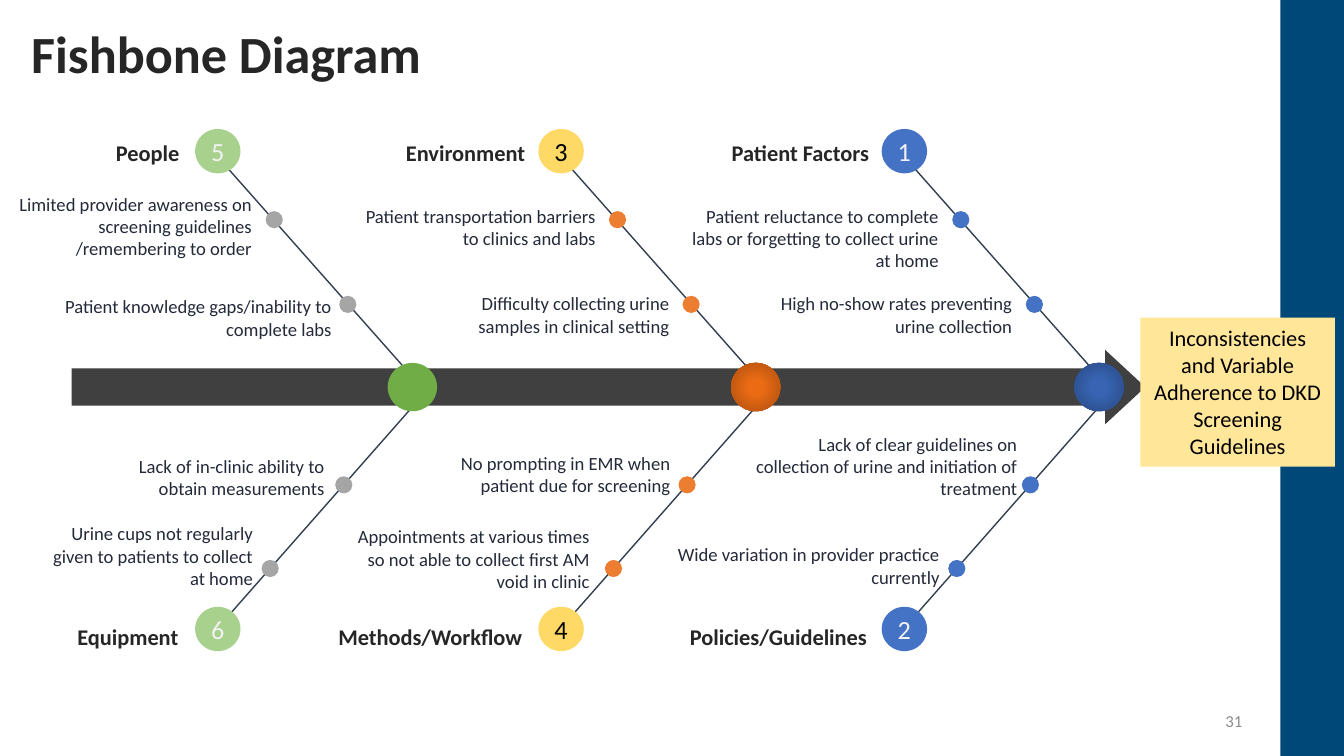
"""Build a fishbone diagram slide on screening guideline adherence."""
from dataclasses import dataclass
from typing import Optional

from lxml.etree import SubElement
from pptx import Presentation
from pptx.dml.color import RGBColor
from pptx.enum.shapes import MSO_CONNECTOR, MSO_SHAPE
from pptx.enum.text import MSO_ANCHOR, MSO_AUTO_SIZE, PP_ALIGN
from pptx.oxml import parse_xml
from pptx.oxml.ns import nsdecls, qn
from pptx.util import Inches, Pt

FONT = "Calibri"
NAVY = RGBColor(0x00, 0x48, 0x77)
SLATE = RGBColor(0x33, 0x3F, 0x50)
CHARCOAL = RGBColor(0x40, 0x40, 0x40)
INK = RGBColor(0x26, 0x26, 0x26)
CAUSE_INK = RGBColor(0x24, 0x2A, 0x39)
BLACK = RGBColor(0x00, 0x00, 0x00)
PALE = RGBColor(0xF2, 0xF2, 0xF2)
PAGE_GRAY = RGBColor(0x8C, 0x8C, 0x8C)
BLUE = RGBColor(0x44, 0x72, 0xC4)
ORANGE = RGBColor(0xED, 0x7D, 0x31)
GRAY = RGBColor(0xA5, 0xA5, 0xA5)
GREEN = RGBColor(0x70, 0xAD, 0x47)
LIGHT_GREEN = RGBColor(0xA9, 0xD1, 0x8E)
GOLD = RGBColor(0xFF, 0xD9, 0x66)
CREAM = RGBColor(0xFF, 0xE6, 0x99)
BLUE_GLOW = [(0, RGBColor(0x38, 0x64, 0xB3)), (23, RGBColor(0x38, 0x64, 0xB3)),
             (69, RGBColor(0x2F, 0x55, 0x97)), (97, RGBColor(0x2C, 0x4F, 0x8C))]
ORANGE_GLOW = [(0, RGBColor(0xEA, 0x6B, 0x14)), (23, RGBColor(0xEA, 0x6B, 0x14)),
               (69, RGBColor(0xC5, 0x5A, 0x11)), (97, RGBColor(0xB8, 0x54, 0x10))]

FIRST_BADGE_X = 2.16
COLUMN_PITCH = 3.405
SPINE_Y = 3.84
JOINT_SHIFT = 1.93


@dataclass(frozen=True)
class Cause:
    text: str
    left: float
    top: float
    width: float
    lines: int = 2


@dataclass(frozen=True)
class Category:
    name: str
    number: str
    left: float
    width: float
    causes: tuple[Cause, Cause]


@dataclass(frozen=True)
class Column:
    badge: RGBColor
    badge_ink: RGBColor
    dot: RGBColor
    joint: RGBColor
    glow: Optional[list]
    upper: Category
    lower: Category


@dataclass(frozen=True)
class Side:
    badge_y: float
    heading_top: float
    bone: tuple[float, float, float, float]
    dots: tuple[tuple[float, float], tuple[float, float]]


UPPER = Side(1.5, 1.26, (0.1, 1.67, 1.87, 3.67), ((0.56, 2.18), (1.29, 3.02)))
LOWER = Side(6.24, 6.06, (0.14, 6.07, 1.91, 4.06), ((0.52, 5.64), (1.25, 4.81)))

COLUMNS = [
    Column(LIGHT_GREEN, PALE, GRAY, GREEN, None,
           Category("People", "5", 0, 1.91, (
               Cause("Limited provider awareness on screening guidelines /remembering to order",
                     0.05, 1.84, 2.58, 3),
               Cause("Patient knowledge gaps/inability to complete labs", 0.51, 2.86, 2.91))),
           Category("Equipment", "6", 0.2, 1.7, (
               Cause("Urine cups not regularly given to patients to collect at home",
                     0.27, 5.11, 2.37, 3),
               Cause("Lack of in-clinic ability to obtain measurements", 1.03, 4.44, 2.32)))),
    Column(GOLD, BLACK, ORANGE, ORANGE, ORANGE_GLOW,
           Category("Environment", "3", 3.41, 1.93, (
               Cause("Patient transportation barriers to clinics and labs", 3.38, 1.96, 2.66),
               Cause("Difficulty collecting urine samples in clinical setting",
                     4.19, 2.83, 2.58))),
           Category("Methods/Workflow", "4", 2.87, 2.44, (
               Cause("Appointments at various times so not able to collect first AM void in clinic",
                     3.26, 5.14, 2.72, 3),
               Cause("No prompting in EMR when patient due for screening", 4, 4.41, 2.78)))),
    Column(BLUE, PALE, BLUE, BLUE, BLUE_GLOW,
           Category("Patient Factors", "1", 6.85, 1.9, (
               Cause("Patient reluctance to complete labs or forgetting to collect urine at home",
                     6.59, 1.96, 2.85, 3),
               Cause("High no-show rates preventing urine collection", 7.48, 2.83, 2.69))),
           Category("Policies/Guidelines", "2", 6.19, 2.54, (
               Cause("Wide variation in provider practice currently", 6.52, 5.32, 2.93),
               Cause("Lack of clear guidelines on collection of urine and initiation of treatment",
                     7.34, 4.22, 2.88, 3)))),
]


def write(frame, text: str, size: float, color: RGBColor, align: PP_ALIGN,
          bold: bool = False, anchor: MSO_ANCHOR = MSO_ANCHOR.TOP,
          insets: tuple[float, float] = (0.13, 0.07), spacing: float = 1.0) -> None:
    frame.word_wrap = True
    frame.auto_size = MSO_AUTO_SIZE.NONE
    frame.vertical_anchor = anchor
    frame.margin_left = frame.margin_right = Inches(insets[0])
    frame.margin_top = frame.margin_bottom = Inches(insets[1])
    paragraph = frame.paragraphs[0]
    paragraph.alignment = align
    paragraph.line_spacing = spacing
    run = paragraph.add_run()
    run.text = text
    run.font.name = FONT
    run.font.size = Pt(size)
    run.font.bold = bold
    run.font.color.rgb = color


def add_label(slide, left: float, top: float, width: float, height: float,
              text: str, size: float, color: RGBColor, **style) -> None:
    label = slide.shapes.add_textbox(Inches(left), Inches(top), Inches(width), Inches(height))
    write(label.text_frame, text, size, color, PP_ALIGN.RIGHT, **style)


def add_block(slide, preset: MSO_SHAPE, left: float, top: float,
              width: float, height: float, color: RGBColor):
    block = slide.shapes.add_shape(preset, Inches(left), Inches(top),
                                   Inches(width), Inches(height))
    block.shadow.inherit = False
    block.fill.solid()
    block.fill.fore_color.rgb = color
    block.line.fill.background()
    return block


def add_disc(slide, x: float, y: float, width: float, height: float, color: RGBColor):
    return add_block(slide, MSO_SHAPE.OVAL, x - width / 2, y - height / 2,
                     width, height, color)


def apply_glow(disc, glow: list) -> None:
    stops = "".join(f'<a:gs pos="{position * 1000}"><a:srgbClr val="{color}"/></a:gs>'
                    for position, color in glow)
    gradient = parse_xml(
        f'<a:gradFill {nsdecls("a")} rotWithShape="1"><a:gsLst>{stops}</a:gsLst>'
        '<a:path path="circle"><a:fillToRect l="50000" t="50000" r="50000" b="50000"/>'
        '</a:path></a:gradFill>')
    properties = disc.element.spPr
    properties.replace(properties.find(qn("a:solidFill")), gradient)


def add_bone(slide, badge_x: float, side: Side) -> None:
    start_x, start_y, end_x, end_y = side.bone
    bone = slide.shapes.add_connector(
        MSO_CONNECTOR.STRAIGHT, Inches(badge_x + start_x), Inches(start_y),
        Inches(badge_x + end_x), Inches(end_y))
    bone.line.color.rgb = SLATE
    bone.line.width = Pt(1)
    SubElement(bone.element.spPr, qn("a:effectLst"))


def add_category(slide, badge_x: float, column: Column, category: Category, side: Side) -> None:
    badge = add_disc(slide, badge_x, side.badge_y, 0.45, 0.44, column.badge)
    write(badge.text_frame, category.number, 18.7, column.badge_ink, PP_ALIGN.CENTER,
          anchor=MSO_ANCHOR.MIDDLE, insets=(0, 0))
    add_label(slide, category.left, side.heading_top, category.width, 0.43,
              category.name, 16, INK, bold=True, spacing=1.2)
    for cause, (shift, dot_y) in zip(category.causes, side.dots):
        add_disc(slide, badge_x + shift, dot_y, 0.17, 0.17, column.dot)
        add_label(slide, cause.left, cause.top, cause.width, 0.13 + 0.225 * cause.lines,
                  cause.text, 13.3, CAUSE_INK)


def main() -> None:
    deck = Presentation()
    deck.slide_width, deck.slide_height = Inches(13.33), Inches(7.5)
    slide = deck.slides.add_slide(deck.slide_layouts[5])
    title = slide.shapes.title
    title.left, title.top = Inches(0.18), Inches(0.14)
    title.width, title.height = Inches(5.14), Inches(0.76)
    write(title.text_frame, "Fishbone Diagram", 37.3, INK, PP_ALIGN.LEFT, bold=True)

    add_block(slide, MSO_SHAPE.RECTANGLE, 12.7, 0, 0.63, 7.5, NAVY)
    placed_columns = [(FIRST_BADGE_X + COLUMN_PITCH * index, column)
                      for index, column in enumerate(COLUMNS)]
    for badge_x, _ in placed_columns:
        for side in (UPPER, LOWER):
            add_bone(slide, badge_x, side)
    spine = add_block(slide, MSO_SHAPE.RIGHT_ARROW, 0.71, 3.47, 10.65, 0.74, CHARCOAL)
    spine.adjustments[0], spine.adjustments[1] = 0.5, 0.54
    for badge_x, column in placed_columns:
        joint = add_disc(slide, badge_x + JOINT_SHIFT, SPINE_Y, 0.49, 0.48, column.joint)
        if column.glow:
            apply_glow(joint, column.glow)
        add_category(slide, badge_x, column, column.upper, UPPER)
        add_category(slide, badge_x, column, column.lower, LOWER)

    effect = add_block(slide, MSO_SHAPE.RECTANGLE, 11.31, 3.15, 1.93, 1.48, CREAM)
    write(effect.text_frame,
          "Inconsistencies and Variable Adherence to DKD Screening Guidelines",
          16, BLACK, PP_ALIGN.CENTER)
    add_label(slide, 9.42, 6.95, 3, 0.4, "31", 12, PAGE_GRAY,
              anchor=MSO_ANCHOR.MIDDLE, insets=(0.1, 0.05))
    deck.save("out.pptx")


if __name__ == "__main__":
    main()
